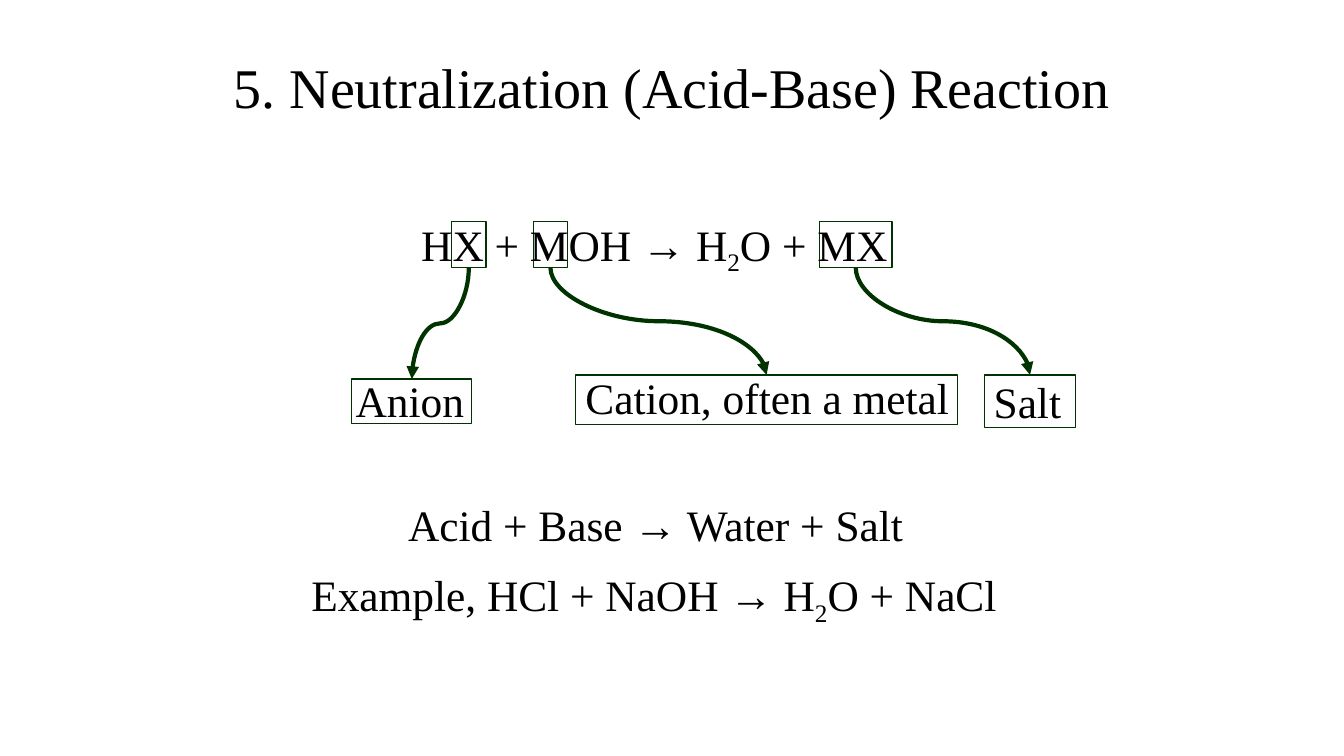
from lxml import etree
from pptx import Presentation
from pptx.dml.color import RGBColor
from pptx.enum.dml import MSO_THEME_COLOR
from pptx.enum.shapes import MSO_CONNECTOR, MSO_SHAPE
from pptx.enum.text import MSO_ANCHOR, PP_ALIGN
from pptx.oxml.ns import qn
from pptx.util import Pt

CURVE = MSO_CONNECTOR.CURVE
RECTANGLE = MSO_SHAPE.RECTANGLE
MIDDLE, TOP = MSO_ANCHOR.MIDDLE, MSO_ANCHOR.TOP
CENTER, LEFT = PP_ALIGN.CENTER, PP_ALIGN.LEFT
FONT = "Times New Roman"
BLACK, WHITE, GREEN = "000000", "FFFFFF", "003300"
TEXT_HEIGHT = 44.6
SYMBOL_TOP, SYMBOL_HEIGHT = 158.4, 32.8


def color(value):
    """Turn a hex string into a colour."""
    return RGBColor.from_string(value)


def add_text(page, left, top, width, height, parts, size=31, align=LEFT, anchor=TOP):
    """Place one line of text; every second part is a subscript."""
    box = page.shapes.add_textbox(Pt(left), Pt(top), Pt(width), Pt(height))
    frame = box.text_frame
    frame.word_wrap = True
    frame.vertical_anchor = anchor
    para = frame.paragraphs[0]
    para.alignment = align
    for index, part in enumerate(parts):
        span = para.add_run()
        span.text = part
        span.font.name = FONT
        span.font.size = Pt(size)
        span.font.color.rgb = color(BLACK)
        if index % 2:
            span._r.get_or_add_rPr().set("baseline", "-25000")


def add_frame(page, left, top, width, height):
    """Draw a thin green outlined rectangle."""
    frame = page.shapes.add_shape(RECTANGLE, Pt(left), Pt(top), Pt(width), Pt(height))
    frame.shadow.inherit = False
    frame.fill.solid()
    frame.fill.fore_color.rgb = color(WHITE)
    frame.line.color.rgb = color(GREEN)
    frame.line.width = Pt(1)


def add_arrow(page, start_x, start_y, end_x, end_y):
    """Draw a curved arrow that leaves and arrives vertically."""
    middle_x, middle_y = (start_x + end_x) / 2, (start_y + end_y) / 2
    to_right = end_x > start_x
    reach = (end_y - start_y) / 2 * (1 if to_right else -1)
    rise = abs(end_x - start_x) / 2
    arrow = page.shapes.add_connector(
        CURVE, Pt(middle_x + reach), Pt(middle_y - rise),
        Pt(middle_x - reach), Pt(middle_y + rise))
    arrow.line.color.rgb = color(GREEN)
    arrow.line.width = Pt(3)
    properties = arrow._element.spPr
    properties.find(qn("a:xfrm")).set("rot", "16200000" if to_right else "5400000")
    etree.SubElement(properties.find(qn("a:ln")), qn("a:tailEnd"), type="triangle")
    etree.SubElement(properties, qn("a:effectLst"))


def add_scheme(page, left, top):
    """Build the general equation with its three explained symbols."""
    symbols = [(322.6, 24.5), (380.9, 24.5), (585.4, 51.8)]
    meanings = [
        ("Anion", (251.3, 270.7, 85.7, 31.7), (247, 263.5, 93.6)),
        ("Cation, often a metal", (411.1, 267.8, 272.9, 35.3), (411.1, 261.4, 288)),
        ("Salt", (703.4, 267.8, 64.8, 37.4), (702.7, 264.2, 64.8)),
    ]
    for (symbol_left, width), (label, frame, text) in zip(symbols, meanings):
        add_frame(page, symbol_left, SYMBOL_TOP, width, SYMBOL_HEIGHT)
        add_frame(page, *frame)
        add_text(page, *text, TEXT_HEIGHT, [label])
        add_arrow(page, symbol_left + width / 2, SYMBOL_TOP + SYMBOL_HEIGHT,
                  frame[0] + frame[2] / 2, frame[1])
    add_text(page, left, top, 352.8, TEXT_HEIGHT, ["HX + MOH → H", "2", "O + MX"])


def add_summary(page, top):
    """Write the reaction in words and as an example."""
    add_text(page, 284.4, top, 372.2, TEXT_HEIGHT, ["Acid + Base → Water + Salt"])
    add_text(page, 215.3, top + 50.4, 510.5, TEXT_HEIGHT,
             ["Example, HCl + NaOH → H", "2", "O + NaCl"])


def main():
    """Build and save the slide."""
    deck = Presentation()
    deck.slide_width, deck.slide_height = Pt(960), Pt(540)
    page = deck.slides.add_slide(deck.slide_layouts[6])
    add_text(page, 66, 28.8, 828, 64.8, ["5. Neutralization (Acid-Base) Reaction"],
             40, CENTER, MIDDLE)
    add_scheme(page, 293.8, 151.9)
    add_summary(page, 352.1)
    deck.save("out.pptx")


if __name__ == "__main__":
    main()
